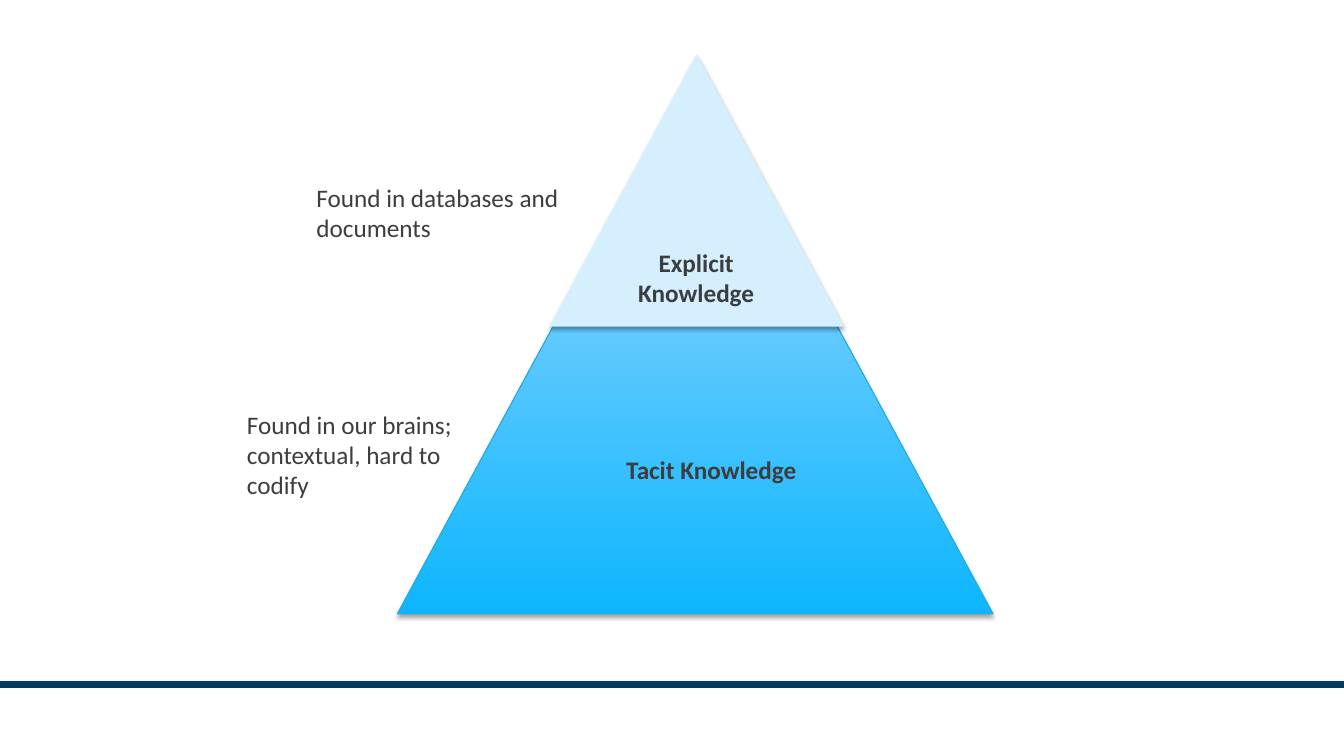
from lxml.etree import SubElement
from pptx import Presentation
from pptx.dml.color import RGBColor
from pptx.enum.shapes import MSO_CONNECTOR, MSO_SHAPE
from pptx.enum.text import MSO_AUTO_SIZE, PP_ALIGN
from pptx.oxml.ns import qn
from pptx.util import Inches, Pt

NAVY = RGBColor(0x00, 0x3A, 0x5D)
BRIGHT_BLUE = RGBColor(0x0D, 0xB6, 0xFE)
LIGHT_BLUE = RGBColor(0xB0, 0xDC, 0xFF)
EDGE_BLUE = RGBColor(0x24, 0xA9, 0xE2)
PALE_BLUE = RGBColor(0xD5, 0xEF, 0xFF)
CHARCOAL = RGBColor(0x3C, 0x3D, 0x3E)


class SlideBuilder:
    text_format = {"name": "Calibri", "size": Pt(18)}
    shadow_format = {"blurRad": Pt(3.1), "dist": Pt(1.8), "dir": 90 * 60000,
                     "algn": "ctr", "rotWithShape": 0}
    shadow_alpha = 35000

    def __init__(self, slide):
        self.slide = slide

    def rule(self, top, width):
        line = self.slide.shapes.add_connector(
            MSO_CONNECTOR.STRAIGHT, 0, Inches(top), Inches(width), Inches(top))
        line.line.color.rgb = NAVY
        line.line.width = Pt(4.75)
        SubElement(line._element.spPr, qn("a:effectLst"))

    def triangle(self, left, top, width, height, colors, edge=None):
        """Add a shadowed triangle; two colours make a gradient from the base up."""
        shape = self.slide.shapes.add_shape(
            MSO_SHAPE.ISOSCELES_TRIANGLE,
            Inches(left), Inches(top), Inches(width), Inches(height))
        if len(colors) == 1:
            shape.fill.solid()
            shape.fill.fore_color.rgb = colors[0]
        else:
            shape.fill.gradient()
            shape.fill.gradient_angle = 90
            for position, (stop, color) in enumerate(zip(shape.fill.gradient_stops, colors)):
                stop.position = position
                stop.color.rgb = color
        if edge is None:
            shape.line.fill.background()
        else:
            shape.line.color.rgb = edge
            shape.line.width = Pt(0.75)
        self.drop_shadow(shape)

    def drop_shadow(self, shape):
        shape.shadow.inherit = False
        effects = shape._element.spPr.find(qn("a:effectLst"))
        shadow = SubElement(effects, qn("a:outerShdw"))
        for name, value in self.shadow_format.items():
            shadow.set(name, str(value))
        color = SubElement(shadow, qn("a:srgbClr"), val="000000")
        SubElement(color, qn("a:alpha"), val=str(self.shadow_alpha))

    def text(self, left, top, width, height, lines, align=PP_ALIGN.LEFT, bold=False):
        box = self.slide.shapes.add_textbox(
            Inches(left), Inches(top), Inches(width), Inches(height))
        frame = box.text_frame
        frame.word_wrap = True
        frame.auto_size = MSO_AUTO_SIZE.SHAPE_TO_FIT_TEXT
        frame.text = "\n".join(lines)
        for paragraph in frame.paragraphs:
            paragraph.alignment = align
            font = paragraph.runs[0].font
            for name, value in {**self.text_format, "bold": bold}.items():
                setattr(font, name, value)
            font.color.rgb = CHARCOAL


def main():
    presentation = Presentation()
    presentation.slide_width = Inches(13.33)
    presentation.slide_height = Inches(7.5)
    builder = SlideBuilder(presentation.slides.add_slide(presentation.slide_layouts[6]))

    builder.rule(6.79, 13.33)
    builder.triangle(3.94, 0.64, 5.91, 5.45, [BRIGHT_BLUE, LIGHT_BLUE], EDGE_BLUE)
    builder.triangle(5.45, 0.54, 2.92, 2.7, [PALE_BLUE])

    builder.text(6.09, 2.4, 1.63, 0.71, ["Explicit Knowledge"], PP_ALIGN.CENTER, True)
    builder.text(5.28, 4.46, 3.55, 0.4, ["Tacit Knowledge"], PP_ALIGN.CENTER, True)
    builder.text(3.04, 1.76, 3.11, 0.71, ["Found in databases and", "documents"])
    builder.text(2.35, 4.01, 2.56, 1.31, ["Found in our brains; contextual, hard to codify"])

    presentation.save("out.pptx")


if __name__ == "__main__":
    main()
